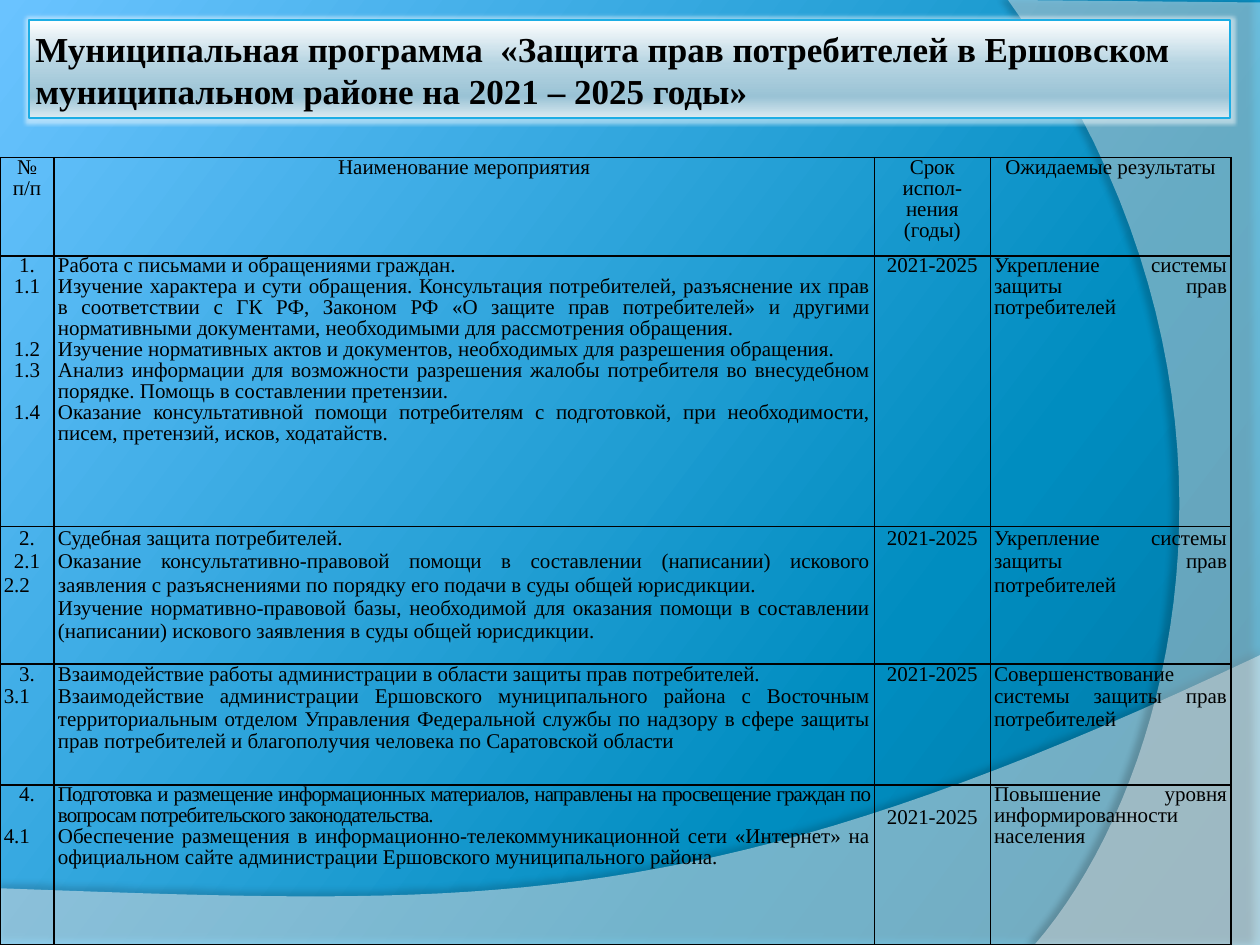
from lxml import etree
from pptx import Presentation, util as u
from pptx.dml.color import RGBColor
from pptx.enum import text as t
from pptx.oxml import parse_xml
from pptx.oxml.ns import nsdecls, qn

WIDE, HIGH = u.Inches(10), u.Inches(7.5)
FONT = "Times New Roman"
MID, LEFT, JUST = t.PP_ALIGN.CENTER, t.PP_ALIGN.LEFT, t.PP_ALIGN.JUSTIFY
COLS = [4.3, 65.1, 9.2, 19.1]
ROWS = [10.4, 28.67, 14.53, 12.8, 16.93]
GAPS = [0.9, 0.9, 1, 0.95, 0.9]
YEARS = "2021-2025"
TITLE = ("Муниципальная программа  «Защита прав потребителей "
         "в Ершовском муниципальном районе на 2021 – 2025 годы»")
HEAD = [["№", "п/п"], ["Наименование мероприятия"],
        ["Срок испол-нения (годы)"], ["Ожидаемые результаты"]]
STEPS = [
    ([("1.", MID, 0), ("1.1", MID, 24), ("1.2", MID, 0), ("1.3", MID, 12), ("1.4", MID, 0)],
     ["Работа с письмами и обращениями граждан.",
      "Изучение характера и сути обращения. Консультация потребителей, разъяснение их прав "
      "в соответствии с ГК РФ, Законом РФ «О защите прав потребителей» и другими "
      "нормативными документами, необходимыми для рассмотрения обращения.",
      "Изучение нормативных актов и документов, необходимых для разрешения обращения.",
      "Анализ информации для возможности разрешения жалобы потребителя во внесудебном "
      "порядке. Помощь в составлении претензии.",
      "Оказание консультативной помощи потребителям с подготовкой, при необходимости, "
      "писем, претензий, исков, ходатайств."],
     "Укрепление системы защиты прав потребителей"),
    ([("2.", MID, 0), ("2.1", MID, 0), ("2.2", LEFT, 0)],
     ["Судебная защита потребителей.",
      "Оказание консультативно-правовой помощи в составлении (написании) искового "
      "заявления с разъяснениями по порядку его подачи в суды общей юрисдикции.",
      "Изучение нормативно-правовой базы, необходимой для оказания помощи в составлении "
      "(написании) искового заявления в суды общей юрисдикции."],
     "Укрепление системы защиты прав потребителей"),
    ([("3.", MID, 0), ("3.1", LEFT, 0)],
     ["Взаимодействие работы администрации в области защиты прав потребителей.",
      "Взаимодействие администрации Ершовского муниципального района с Восточным "
      "территориальным отделом Управления Федеральной службы по надзору в сфере защиты "
      "прав потребителей и благополучия человека по Саратовской области"],
     "Совершенствование системы защиты прав потребителей"),
    ([("4.", MID, 12), ("4.1", LEFT, 0)],
     ["Подготовка и размещение информационных материалов, направлены на просвещение "
      "граждан по вопросам потребительского законодательства.",
      "Обеспечение размещения в информационно-телекоммуникационной сети «Интернет» на "
      "официальном сайте администрации Ершовского муниципального района."],
     "Повышение уровня информированности населения"),
]


def across(share):
    return u.Emu(int(WIDE * share / 100))


def down(share):
    return u.Emu(int(HIGH * share / 100))


def color(code):
    return RGBColor.from_string(code)


def blend(fill, root, stops, angle):
    fill.gradient()
    fill.gradient_angle = angle
    stop_list = next(root.iter(qn("a:gsLst")))
    for old in list(stop_list):
        stop_list.remove(old)
    for place, code in stops:
        stop = etree.SubElement(stop_list, qn("a:gs"), pos=str(place * 1000))
        etree.SubElement(stop, qn("a:srgbClr"), val=code)


def effect(shape, inner):
    shape._element.spPr.append(parse_xml(
        f'<a:effectLst {nsdecls("a")}>{inner}</a:effectLst>'))


def curve(a, b, c, d, count=40):
    for step in range(count + 1):
        k = step / count
        parts = (1 - k) ** 3, 3 * k * (1 - k) ** 2, 3 * k * k * (1 - k), k ** 3
        yield tuple(sum(w * p[i] for w, p in zip(parts, (a, b, c, d))) for i in (0, 1))


def wave(slide, edge, bend, clear, shade, blur, dist, angle):
    spots = [(across(x), down(y)) for x, y in [*edge, *curve(*bend)]]
    form = slide.shapes.build_freeform(*spots[0], scale=1.0)
    form.add_line_segments(spots[1:], close=True)
    shape = form.convert_to_shape()
    shape.fill.solid()
    shape.fill.fore_color.rgb = color("FFFFFF")
    tint = next(shape._element.spPr.iter(qn("a:srgbClr")))
    etree.SubElement(tint, qn("a:alpha"), val=str(clear * 1000))
    shape.line.fill.background()
    effect(shape, f'<a:outerShdw blurRad="{u.Pt(blur)}" dist="{u.Pt(dist)}" '
                  f'dir="{angle * 60000}" algn="ctr" rotWithShape="0"><a:srgbClr val="000000">'
                  f'<a:alpha val="{shade * 1000}"/></a:srgbClr></a:outerShdw>')


def style(font, size, bold=False):
    font.name, font.size, font.bold = FONT, u.Pt(size), bold
    font.color.rgb = color("000000")


def banner(slide):
    box = slide.shapes.title
    slide.shapes._spTree.append(box._element)
    box.left, box.top, box.width, box.height = across(2.3), down(2.13), across(95.3), down(10.4)
    blend(box.fill, box._element,
          [(0, "FFFFFF"), (45, "B4D3E1"), (78, "9AC3D5"), (100, "DCEBF2")], 270)
    box.line.color.rgb = color("1CADE4")
    box.line.width = u.Pt(1)
    effect(box, f'<a:glow rad="{u.Pt(4)}"><a:srgbClr val="FFFFFF">'
                '<a:alpha val="50000"/></a:srgbClr></a:glow>')
    frame = box.text_frame
    frame.text = TITLE
    frame.word_wrap = True
    frame.auto_size = t.MSO_AUTO_SIZE.NONE
    frame.vertical_anchor = t.MSO_ANCHOR.MIDDLE
    frame.margin_left = frame.margin_right = frame.margin_top = frame.margin_bottom = u.Inches(0.05)
    line = frame.paragraphs[0]
    line.alignment = LEFT
    style(line.font, 20, True)


def border(cell):
    props = cell._tc.get_or_add_tcPr()
    for place, side in enumerate(("lnL", "lnR", "lnT", "lnB")):
        props.insert(place, parse_xml(
            f'<a:{side} {nsdecls("a")} w="{u.Pt(1)}"><a:solidFill>'
            f'<a:srgbClr val="000000"/></a:solidFill></a:{side}>'))


def write(cell, lines, gap):
    cell.margin_left = cell.margin_right = u.Inches(0.03)
    cell.margin_top = cell.margin_bottom = 0
    cell.fill.background()
    border(cell)
    frame = cell.text_frame
    frame.text = "\n".join(words for words, _, _ in lines)
    for line, (_, side, after) in zip(frame.paragraphs, lines):
        line.alignment, line.line_spacing = side, gap
        line.space_after = u.Pt(after)
        style(line.font, 12)


def plan(slide):
    table = slide.shapes.add_table(len(ROWS), len(COLS), 0, down(16.67),
                                   across(sum(COLS)), down(sum(ROWS))).table
    table.first_row = table.horz_banding = False
    for col, share in zip(table.columns, COLS):
        col.width = across(share)
    for row, share in zip(table.rows, ROWS):
        row.height = down(share)
    grid = [[[(words, MID, 0) for words in cell] for cell in HEAD]]
    for marks, tasks, goal in STEPS:
        grid.append([marks, [(task, JUST, 0) for task in tasks],
                     [(YEARS, MID, 0)], [(goal, JUST, 0)]])
    for r, (row, gap) in enumerate(zip(grid, GAPS)):
        for c, lines in enumerate(row):
            write(table.cell(r, c), lines, gap)
    last = len(ROWS) - 1
    table.cell(last, 2).margin_top = u.Inches(0.18)
    tight = table.cell(last, 1).text_frame.paragraphs[0].runs[0]
    tight._r.get_or_add_rPr().set("spc", "-50")


def main():
    deck = Presentation()
    deck.slide_width, deck.slide_height = WIDE, HIGH
    slide = deck.slides.add_slide(deck.slide_layouts[5])
    blend(slide.background.fill, slide._element,
          [(0, "0076A1"), (30, "008DC0"), (100, "6AC3FF")], 143)
    wave(slide, [(0, 94), (0, 100), (100, 100)],
         [(100, 69.33), (55.9, 97.2), (39.1, 95.87), (0, 94)], 45, 35, 4, 3.5, 270)
    wave(slide, [(100, 0.27), (100, 100)],
         [(82.1, 100), (93.5, 82.53), (101.8, 40), (80, 0)], 40, 45, 4, 4, 180)
    banner(slide)
    plan(slide)
    deck.save("out.pptx")


if __name__ == "__main__":
    main()
